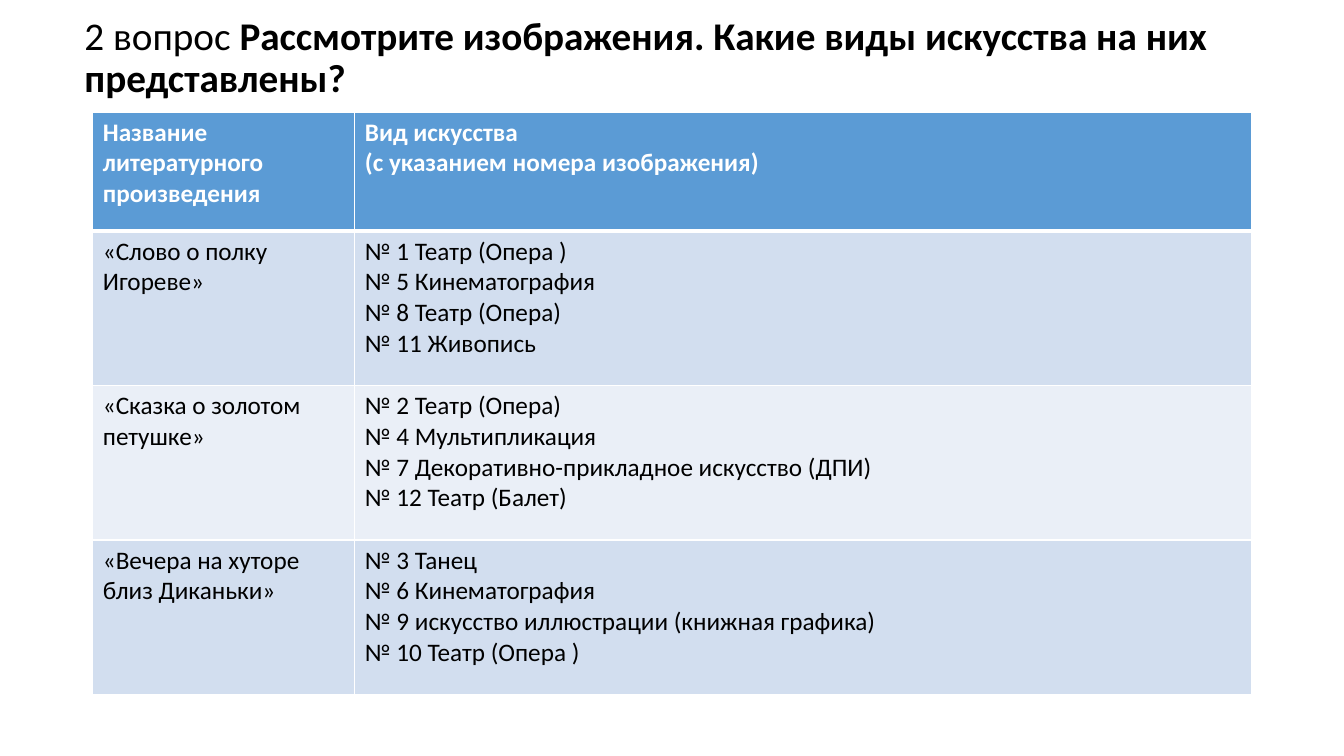
from dataclasses import dataclass

from lxml.etree import SubElement
from pptx import Presentation
from pptx.dml.color import RGBColor
from pptx.enum.text import MSO_ANCHOR
from pptx.oxml.ns import qn
from pptx.slide import Slide
from pptx.table import _Cell as Cell
from pptx.util import Pt

FONT = "Calibri"
WHITE, BLACK = "FFFFFF", "000000"
HEADER_FILL, DARK_BAND, LIGHT_BAND = "5B9BD5", "D2DEEF", "EAEFF7"
COLUMN_WIDTHS = (187.2, 640.8)
HEADER_HEIGHT, BODY_HEIGHT = 85, 110.4


@dataclass(frozen=True)
class ArtRow:
    work: str
    art_forms: tuple[str, ...]


HEADER = ArtRow(
    "Название литературного произведения",
    ("Вид искусства", "(с указанием номера изображения)"),
)
WORKS = (
    ArtRow("«Слово о полку Игореве»", (
        "№ 1 Театр (Опера )",
        "№ 5 Кинематография",
        "№ 8 Театр (Опера)",
        "№ 11 Живопись",
    )),
    ArtRow("«Сказка о золотом петушке»", (
        "№ 2 Театр (Опера)",
        "№ 4 Мультипликация",
        "№ 7 Декоративно-прикладное искусство (ДПИ)",
        "№ 12 Театр (Балет)",
    )),
    ArtRow("«Вечера на хуторе близ Диканьки»", (
        "№ 3 Танец",
        "№ 6 Кинематография",
        "№ 9 искусство иллюстрации (книжная графика)",
        "№ 10 Театр (Опера )",
    )),
)


def color(value: str) -> RGBColor:
    return RGBColor.from_string(value)


def add_borders(cell: Cell, top: float, bottom: float) -> None:
    properties = cell._tc.get_or_add_tcPr()
    for side, width in (("L", 1), ("R", 1), ("T", top), ("B", bottom)):
        line = SubElement(properties, qn(f"a:ln{side}"), w=str(Pt(width)))
        fill = SubElement(line, qn("a:solidFill"))
        SubElement(fill, qn("a:srgbClr"), val=WHITE)


def fill_cell(cell: Cell, lines: tuple[str, ...], fill: str, is_header: bool) -> None:
    cell.fill.solid()
    cell.fill.fore_color.rgb = color(fill)
    cell.text = "\n".join(lines)
    for paragraph in cell.text_frame.paragraphs:
        paragraph.font.name = FONT
        paragraph.font.size = Pt(18)
        paragraph.font.bold = is_header
        paragraph.font.color.rgb = color(WHITE if is_header else BLACK)


def add_title(slide: Slide) -> None:
    shape = slide.shapes.add_textbox(Pt(53.3), Pt(22.3), Pt(828), Pt(69.8))
    frame = shape.text_frame
    frame.word_wrap = True
    frame.vertical_anchor = MSO_ANCHOR.MIDDLE
    frame.margin_bottom = Pt(34)
    paragraph = frame.paragraphs[0]
    paragraph.line_spacing = 0.9
    paragraph.font.name = FONT
    paragraph.font.size = Pt(28)
    paragraph.font.color.rgb = color(BLACK)
    paragraph.add_run().text = "2 вопрос "
    question = paragraph.add_run()
    question.text = "Рассмотрите изображения. Какие виды искусства на них представлены?"
    question.font.bold = True


def add_art_table(slide: Slide) -> None:
    rows = (HEADER, *WORKS)
    height = HEADER_HEIGHT + BODY_HEIGHT * len(WORKS)
    table = slide.shapes.add_table(
        len(rows), len(COLUMN_WIDTHS), Pt(66.3), Pt(80), Pt(sum(COLUMN_WIDTHS)), Pt(height)
    ).table
    for column, width in zip(table.columns, COLUMN_WIDTHS):
        column.width = Pt(width)
    for index, row in enumerate(rows):
        is_header = index == 0
        table.rows[index].height = Pt(HEADER_HEIGHT if is_header else BODY_HEIGHT)
        band = DARK_BAND if index % 2 else LIGHT_BAND
        for column, lines in enumerate(((row.work,), row.art_forms)):
            cell = table.cell(index, column)
            add_borders(cell, top=3 if index == 1 else 1, bottom=3 if is_header else 1)
            fill_cell(cell, lines, HEADER_FILL if is_header else band, is_header)


def main() -> None:
    presentation = Presentation()
    presentation.slide_width = Pt(960)
    presentation.slide_height = Pt(540)
    slide = presentation.slides.add_slide(presentation.slide_layouts[6])
    add_title(slide)
    add_art_table(slide)
    presentation.save("out.pptx")


if __name__ == "__main__":
    main()
